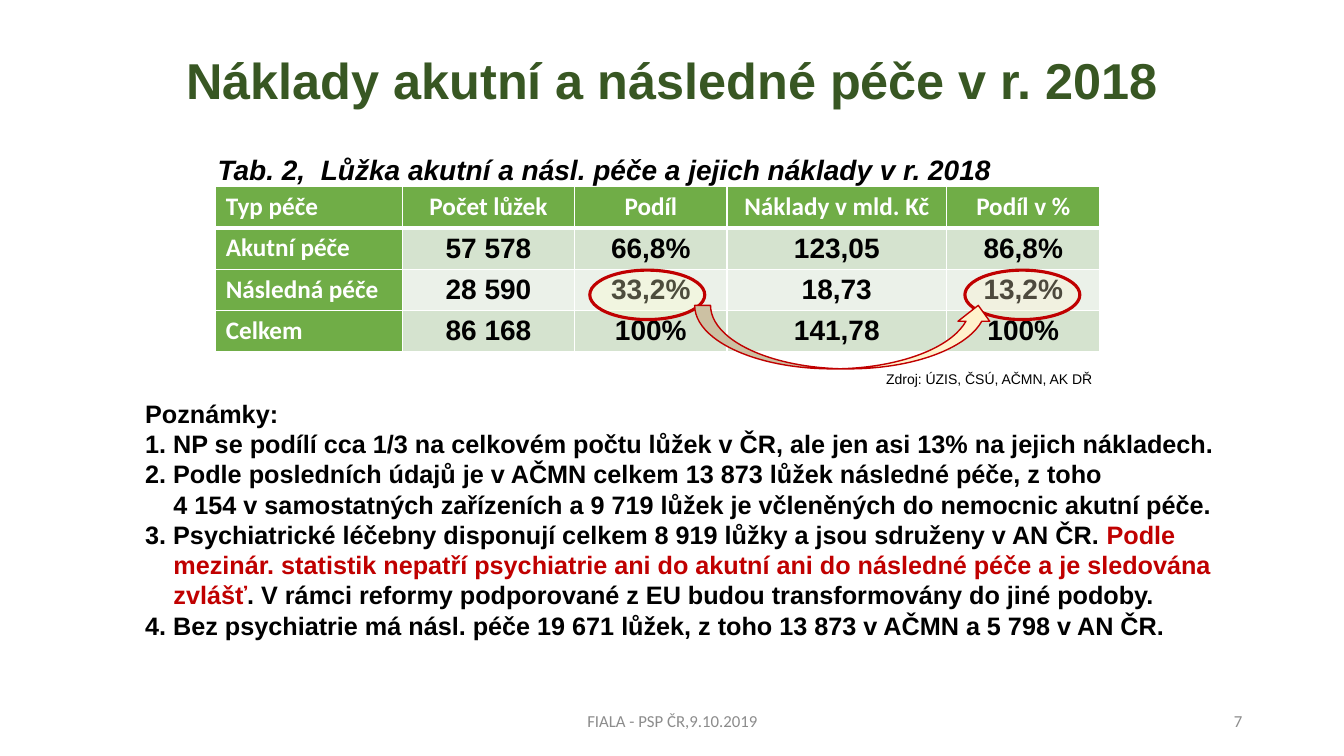
from dataclasses import dataclass

from lxml.etree import SubElement
from pptx import Presentation
from pptx.dml.color import RGBColor
from pptx.enum.shapes import MSO_SHAPE
from pptx.enum.text import MSO_ANCHOR, MSO_AUTO_SIZE, PP_ALIGN
from pptx.oxml.ns import qn
from pptx.util import Pt

# Content
TITLE = "Náklady akutní a následné péče v r. 2018"
CAPTION = "Tab. 2,  Lůžka akutní a násl. péče a jejich náklady v r. 2018"
SOURCE = "Zdroj: ÚZIS, ČSÚ, AČMN, AK DŘ"
FOOTER = "FIALA - PSP ČR,9.10.2019"
PAGE = "7"
COSTS = [
    ("Typ péče", "Počet lůžek", "Podíl", "Náklady v mld. Kč", "Podíl v %"),
    ("Akutní péče", "57 578", "66,8%", "123,05", "86,8%"),
    ("Následná péče", "28 590", "33,2%", "18,73", "13,2%"),
    ("Celkem", "86 168", "100%", "141,78", "100%"),
]
# Each note is a list of (text, colour name); \v breaks the line
NOTES = [
    [("Poznámky:", "black")],
    [("1. NP se podílí cca 1/3 na celkovém počtu lůžek v ČR, ale jen asi 13% na jejich nákladech.", "black")],
    [("2. Podle posledních údajů je v AČMN celkem 13 873 lůžek následné péče, z toho\v"
      "4 154 v samostatných zařízeních a 9 719 lůžek je včleněných do nemocnic akutní péče.", "black")],
    [("3. Psychiatrické léčebny disponují celkem 8 919 lůžky a jsou sdruženy v AN ČR. ", "black"),
     ("Podle\vmezinár. statistik nepatří psychiatrie ani do akutní ani do následné péče a je sledována\vzvlášť", "red"),
     (". V rámci reformy podporované z EU budou transformovány do jiné podoby.", "black")],
    [("4. Bez psychiatrie má násl. péče 19 671 lůžek, z toho 13 873 v AČMN a 5 798 v AN ČR.", "black")],
]


@dataclass(frozen=True)
class Theme:
    heading: str = "385723"
    black: str = "000000"
    white: str = "FFFFFF"
    red: str = "C00000"
    gray: str = "8C8C8C"
    green: str = "70AD47"
    bands: tuple = ("D5E3CF", "EBF1E9")
    yellow: str = "FFFFCC"
    cream: str = "FFF2CC"
    title_size: int = 36
    large: int = 20
    medium: int = 18
    footer_size: int = 12
    small: int = 10


THEME = Theme()

# Geometry in px, 100 px to the inch
EMU_PER_PX = 9144
SLIDE_SIZE = (1333, 750)
TITLE_BOX = (92, 21, 1150, 124)
CAPTION_BOX = (206, 146, 793, 44)
SOURCE_BOX = (869, 363, 236, 27)
NOTES_BOX = (134, 390, 1087, 252)
FOOTER_BOX = (442, 695, 450, 40)
PAGE_BOX = (942, 695, 300, 40)
ARROW_BOX = (689, 303, 297, 63)
TABLE_ORIGIN = (214, 185)
COLUMN_WIDTHS = (185, 171, 151, 218, 152)
ROW_HEIGHT = 41
RING_SIZE = (114, 49)
RING_TOP = 268
RINGS = [(585, THEME.yellow), (957, THEME.cream)]
NOTE_INDENT = 28


def px(*lengths):
    return [length * EMU_PER_PX for length in lengths]


def style_font(font, color, **values):
    for name, value in values.items():
        setattr(font, name, Pt(value) if name == "size" else value)
    font.color.rgb = RGBColor.from_string(color)


def write(frame, text, align, color, **values):
    paragraph = frame.paragraphs[0]
    paragraph.alignment = align
    run = paragraph.add_run()
    run.text = text
    style_font(run.font, color, **values)
    return paragraph


def add_text(slide, box, text, align, anchor, wrap, color, **values):
    frame = slide.shapes.add_textbox(*px(*box)).text_frame
    frame.word_wrap = wrap
    frame.vertical_anchor = anchor
    write(frame, text, align, color, **values)


def place(shape, box):
    for name, value in zip(("left", "top", "width", "height"), px(*box)):
        setattr(shape, name, value)


def add_mark(slide, kind, box, fill, line_width, opacity=100):
    shape = slide.shapes.add_shape(kind, *px(*box))
    shape.shadow.inherit = False
    shape.fill.solid()
    shape.fill.fore_color.rgb = RGBColor.from_string(fill)
    shape.line.color.rgb = RGBColor.from_string(THEME.red)
    shape.line.width = Pt(line_width)
    if opacity < 100:
        color = shape._element.spPr.find(qn("a:solidFill"))[0]
        SubElement(color, qn("a:alpha"), val=str(opacity * 1000))


def set_borders(cell, widths):
    properties = cell._tc.get_or_add_tcPr()
    for index, (side, width) in enumerate(widths.items()):
        line = properties.makeelement(qn(f"a:ln{side}"), {"w": str(Pt(width))})
        fill = SubElement(line, qn("a:solidFill"))
        SubElement(fill, qn("a:srgbClr"), val=THEME.white)
        properties.insert(index, line)


def add_cost_table(slide):
    size = (sum(COLUMN_WIDTHS), ROW_HEIGHT * len(COSTS))
    table = slide.shapes.add_table(len(COSTS), len(COLUMN_WIDTHS), *px(*TABLE_ORIGIN, *size)).table
    for column, width in zip(table.columns, px(*COLUMN_WIDTHS)):
        column.width = width
    for row_index, values in enumerate(COSTS):
        table.rows[row_index].height = ROW_HEIGHT * EMU_PER_PX
        for column_index, value in enumerate(values):
            cell = table.cell(row_index, column_index)
            heading = row_index == 0 or column_index == 0
            fill = THEME.green if heading else THEME.bands[(row_index - 1) % 2]
            cell.fill.solid()
            cell.fill.fore_color.rgb = RGBColor.from_string(fill)
            bottom = 3 if row_index == 0 else 1
            top = 3 if row_index == 1 else 1
            set_borders(cell, {"L": 1, "R": 1, "T": top, "B": bottom})
            write(cell.text_frame, value,
                  PP_ALIGN.CENTER if column_index else PP_ALIGN.LEFT,
                  THEME.white if heading else THEME.black,
                  size=THEME.medium if heading else THEME.large,
                  name="Calibri" if heading else "Arial", bold=True)


def fill_notes(body):
    place(body, NOTES_BOX)
    frame = body.text_frame
    frame.word_wrap = False
    frame.auto_size = MSO_AUTO_SIZE.NONE
    for index, parts in enumerate(NOTES):
        paragraph = frame.add_paragraph() if index else frame.paragraphs[0]
        paragraph.space_before = Pt(0)
        indent = NOTE_INDENT * EMU_PER_PX if index else 0
        properties = paragraph._p.get_or_add_pPr()
        properties.set("marL", str(indent))
        properties.set("indent", str(-indent))
        SubElement(properties, qn("a:buNone"))
        for text, color in parts:
            for line_index, line in enumerate(text.split("\v")):
                if line_index:
                    paragraph.add_line_break()
                run = paragraph.add_run()
                run.text = line
                style_font(run.font, getattr(THEME, color), size=THEME.medium, name="Arial", bold=True)


def main():
    presentation = Presentation()
    presentation.slide_width, presentation.slide_height = px(*SLIDE_SIZE)
    slide = presentation.slides.add_slide(presentation.slide_layouts[1])

    # Title
    title = slide.shapes.title
    place(title, TITLE_BOX)
    title.text_frame.vertical_anchor = MSO_ANCHOR.MIDDLE
    heading = write(title.text_frame, TITLE, PP_ALIGN.CENTER, THEME.heading,
                    size=THEME.title_size, name="Arial", bold=True)
    heading.line_spacing = 0.9

    # Table with its caption and source
    add_cost_table(slide)
    add_text(slide, CAPTION_BOX, CAPTION, PP_ALIGN.LEFT, MSO_ANCHOR.TOP, False, THEME.black,
             size=THEME.large, name="Arial", bold=True, italic=True)
    add_text(slide, SOURCE_BOX, SOURCE, PP_ALIGN.LEFT, MSO_ANCHOR.TOP, False, THEME.black,
             size=THEME.small, name="Arial")

    # Rings around the compared shares, joined by an arrow
    for left, fill in RINGS:
        add_mark(slide, MSO_SHAPE.OVAL, (left, RING_TOP, *RING_SIZE), fill, 2.25, opacity=30)
    add_mark(slide, MSO_SHAPE.CURVED_UP_ARROW, ARROW_BOX, THEME.cream, 1)

    # Notes and footer
    fill_notes(slide.placeholders[1])
    for box, text, align in ((FOOTER_BOX, FOOTER, PP_ALIGN.CENTER), (PAGE_BOX, PAGE, PP_ALIGN.RIGHT)):
        add_text(slide, box, text, align, MSO_ANCHOR.MIDDLE, True, THEME.gray,
                 size=THEME.footer_size, name="Calibri")

    presentation.save("out.pptx")


if __name__ == "__main__":
    main()
